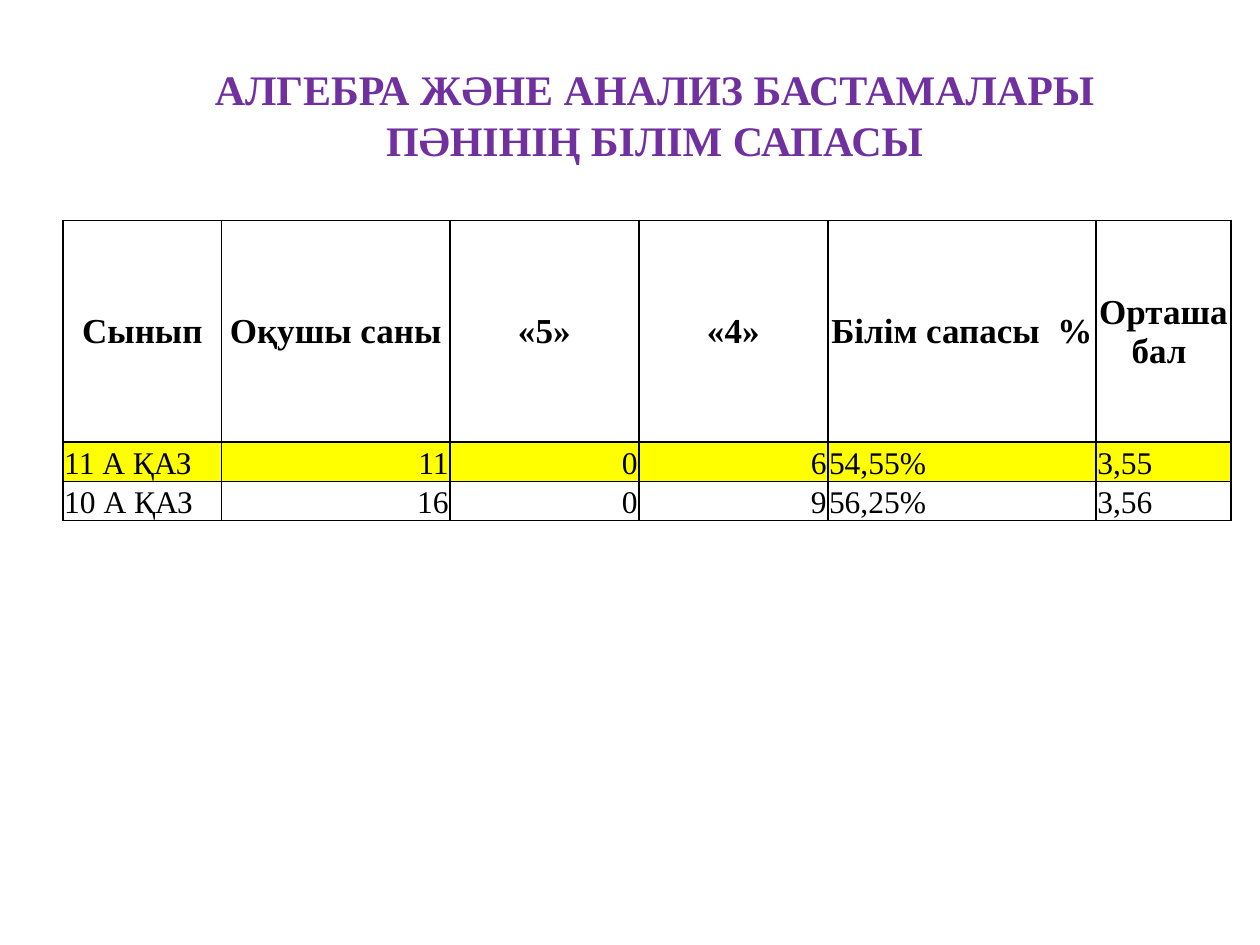
from lxml.etree import SubElement
from pptx import Presentation
from pptx.dml.color import RGBColor
from pptx.enum.text import MSO_ANCHOR, PP_ALIGN
from pptx.oxml.ns import qn
from pptx.util import Inches, Pt

PURPLE = RGBColor(0x70, 0x30, 0xA0)
BLACK = RGBColor(0, 0, 0)
WHITE = RGBColor(255, 255, 255)
YELLOW = RGBColor(255, 255, 0)
FONT = "Times New Roman"

TITLE_LINES = ["АЛГЕБРА ЖӘНЕ АНАЛИЗ БАСТАМАЛАРЫ", "ПӘНІНІҢ БІЛІМ САПАСЫ"]
HEADINGS = ["Сынып", "Оқушы саны", "«5»", "«4»", "Білім сапасы  %", "Орташа бал "]
CLASSES = [
    ["11 А ҚАЗ", "11", "0", "6", "54,55%", "3,55"],
    ["10 А ҚАЗ", "16", "0", "9", "56,25%", "3,56"],
]
ROW_FILLS = [WHITE, YELLOW, WHITE]
ROW_HEIGHTS = [1.76, 0.28, 0.28]
COLUMN_WIDTHS = [1.26, 1.81, 1.5, 1.5, 2.13, 1.07]
LEFT, CENTER, RIGHT = PP_ALIGN.LEFT, PP_ALIGN.CENTER, PP_ALIGN.RIGHT
COLUMN_ALIGNS = [LEFT, RIGHT, RIGHT, RIGHT, LEFT, LEFT]


def add_span(para, text, size, color, bold):
    """Add one formatted run to a paragraph."""
    span = para.add_run()
    span.text = text
    span.font.name = FONT
    span.font.size = Pt(size)
    span.font.bold = bold
    span.font.color.rgb = color


def add_title(page, left, top, width, height):
    """Place the two-line heading centred in its box."""
    box = page.shapes.add_textbox(Inches(left), Inches(top), Inches(width), Inches(height))
    frame = box.text_frame
    frame.word_wrap = True
    frame.vertical_anchor = MSO_ANCHOR.MIDDLE
    para = frame.paragraphs[0]
    para.alignment = CENTER
    for index, line in enumerate(TITLE_LINES):
        if index:
            para.add_line_break()
        add_span(para, line, 24, PURPLE, True)


def add_borders(cell):
    """Draw a thin black line on every side of a cell."""
    properties = cell._tc.get_or_add_tcPr()
    for position, side in enumerate(["a:lnL", "a:lnR", "a:lnT", "a:lnB"]):
        line = SubElement(properties, qn(side), w=str(Pt(1)))
        fill = SubElement(line, qn("a:solidFill"))
        SubElement(fill, qn("a:srgbClr"), val=str(BLACK))
        properties.insert(position, line)


def fill_cell(cell, text, fill, align, heading):
    """Write and style one table cell."""
    cell.margin_left = cell.margin_right = cell.margin_top = Inches(0.01)
    cell.margin_bottom = 0
    cell.vertical_anchor = MSO_ANCHOR.MIDDLE if heading else MSO_ANCHOR.BOTTOM
    cell.fill.solid()
    cell.fill.fore_color.rgb = fill
    add_borders(cell)
    para = cell.text_frame.paragraphs[0]
    para.alignment = align
    add_span(para, text, 20 if heading else 18, BLACK, heading)


def add_results(page, left, top):
    """Place the table of class results."""
    rows = [HEADINGS, *CLASSES]
    table = page.shapes.add_table(
        len(rows), len(HEADINGS), Inches(left), Inches(top),
        Inches(sum(COLUMN_WIDTHS)), Inches(sum(ROW_HEIGHTS)),
    ).table
    for column, width in zip(table.columns, COLUMN_WIDTHS):
        column.width = Inches(width)
    for r, (texts, fill, height) in enumerate(zip(rows, ROW_FILLS, ROW_HEIGHTS)):
        table.rows[r].height = Inches(height)
        heading = r == 0
        for c, (text, align) in enumerate(zip(texts, COLUMN_ALIGNS)):
            fill_cell(table.cell(r, c), text, fill, CENTER if heading else align, heading)


def main():
    """Build the slide and save the deck."""
    deck = Presentation()
    deck.slide_width, deck.slide_height = Inches(10), Inches(7.5)
    page = deck.slides.add_slide(deck.slide_layouts[6])
    add_title(page, 0.59, 0.71, 9.21, 0.39)
    add_results(page, 0.5, 1.75)
    deck.save("out.pptx")


if __name__ == "__main__":
    main()
